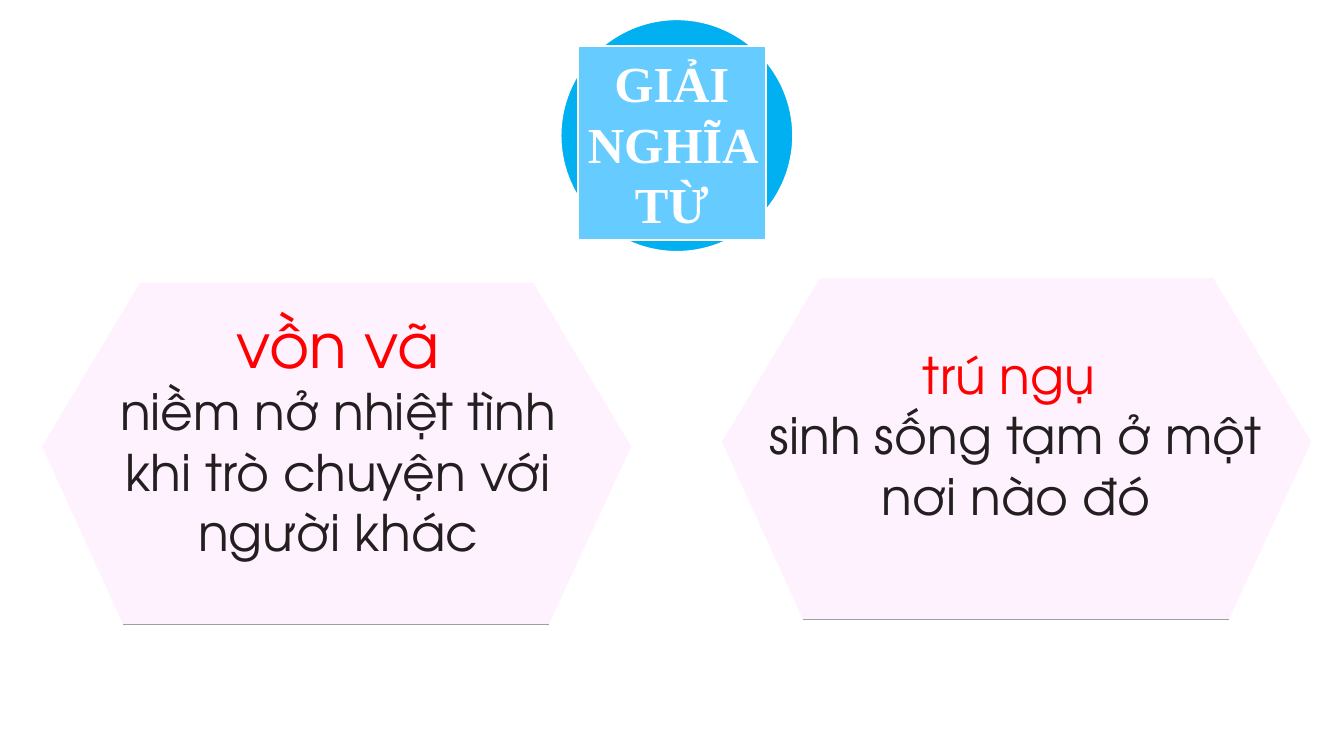
"""Build the word-meaning slide with its title badge and two definition cards."""
from typing import NamedTuple

from lxml.etree import SubElement
from pptx import Presentation
from pptx.dml.color import RGBColor
from pptx.enum.shapes import MSO_CONNECTOR as Connector, MSO_SHAPE as Preset
from pptx.enum.text import MSO_ANCHOR as Anchor, MSO_AUTO_SIZE as AutoSize, PP_ALIGN as Align
from pptx.oxml.ns import qn
from pptx.util import Pt

WHITE = RGBColor(0xFF, 0xFF, 0xFF)
DEEP_BLUE = RGBColor(0x00, 0xB0, 0xF0)
SKY_BLUE = RGBColor(0x66, 0xCC, 0xFF)
PALE_PINK = RGBColor(0xFF, 0xF2, 0xFF)
RED = RGBColor(0xFF, 0x00, 0x00)
INK = RGBColor(0x23, 0x1F, 0x20)
EDGE_GREY = RGBColor(0xA0, 0xA0, 0xA0)

WORD_FONT = "TeX Gyre Adventor"
HEXAGON = ((0, 117), (70, 0), (351, 0), (421, 117), (362, 244), (58, 244))


class Box(NamedTuple):
    left: float
    top: float
    width: float
    height: float


class Card(NamedTuple):
    left: float
    top: float
    text_box: Box
    word: str
    word_size: int
    meaning: str


CARDS = (
    Card(30, 202, Box(61.2, 215.3, 360.7, 191.5), "vồn vã", 44,
         "niềm nở nhiệt tình khi trò chuyện với người khác"),
    Card(515.7, 198.7, Box(540, 241.9, 371.5, 138.2), "trú ngụ ", 36,
         "sinh sống tạm ở một nơi nào đó"),
)


def set_all(target, values: dict) -> None:
    for name, value in values.items():
        setattr(target, name, value)


def place(shape, box: Box) -> None:
    set_all(shape, {name: Pt(value) for name, value in box._asdict().items()})


def paint(shape, fill: RGBColor) -> None:
    shape.fill.solid()
    shape.fill.fore_color.rgb = fill


def outline(shape, color: RGBColor, width: float) -> None:
    shape.line.color.rgb = color
    shape.line.width = Pt(width)


def write(paragraph, text: str, font: str, size: int, color: RGBColor, bold: bool) -> None:
    properties = paragraph._p.get_or_add_pPr()
    properties.set("marL", "0")
    properties.set("indent", "0")
    SubElement(properties, qn("a:buNone"))
    set_all(paragraph, {"text": text, "alignment": Align.CENTER,
                        "space_before": Pt(0), "line_spacing": 1.0})
    set_all(paragraph.font, {"name": font, "size": Pt(size), "bold": bold})
    paragraph.font.color.rgb = color


def add_badge(slide) -> None:
    circle = slide.shapes.add_shape(Preset.OVAL, Pt(400.3), Pt(13.7), Pt(166.3), Pt(166.3))
    circle.shadow.inherit = False
    paint(circle, DEEP_BLUE)
    outline(circle, WHITE, 1.5)
    title = slide.shapes.title
    place(title, Box(412.6, 33.1, 134.6, 138.2))
    paint(title, SKY_BLUE)
    outline(title, WHITE, 1.5)
    set_all(title.text_frame, {"auto_size": AutoSize.NONE, "word_wrap": True,
                               "vertical_anchor": Anchor.MIDDLE,
                               "margin_left": Pt(3), "margin_right": Pt(3)})
    write(title.text_frame.paragraphs[0], "GIẢI NGHĨA TỪ", "Times New Roman", 36, WHITE, True)
    circle.element.addnext(title.element)


def add_card(slide, definition, card: Card) -> None:
    corners = [(Pt(card.left + x), Pt(card.top + y)) for x, y in HEXAGON]
    builder = slide.shapes.build_freeform(*corners[0], scale=1.0)
    builder.add_line_segments(corners[1:], close=True)
    hexagon = builder.convert_to_shape()
    hexagon.shadow.inherit = False
    paint(hexagon, PALE_PINK)
    hexagon.line.fill.background()
    base = slide.shapes.add_connector(Connector.STRAIGHT, *corners[-1], *corners[-2])
    outline(base, EDGE_GREY, 0.5)
    SubElement(base.element.spPr, qn("a:effectLst"))
    place(definition, card.text_box)
    frame = definition.text_frame
    set_all(frame, {"auto_size": AutoSize.NONE, "word_wrap": True,
                    "vertical_anchor": Anchor.TOP})
    write(frame.paragraphs[0], card.word, WORD_FONT, card.word_size, RED, False)
    write(frame.add_paragraph(), card.meaning, WORD_FONT, 36, INK, False)
    base.element.addnext(definition.element)


def main() -> None:
    deck = Presentation()
    set_all(deck, {"slide_width": Pt(960), "slide_height": Pt(540)})
    slide = deck.slides.add_slide(deck.slide_layouts.get_by_name("Two Content"))
    definitions = [slide.placeholders[1], slide.placeholders[2]]
    add_badge(slide)
    for definition, card in zip(definitions, CARDS):
        add_card(slide, definition, card)
    deck.save("out.pptx")


if __name__ == "__main__":
    main()
